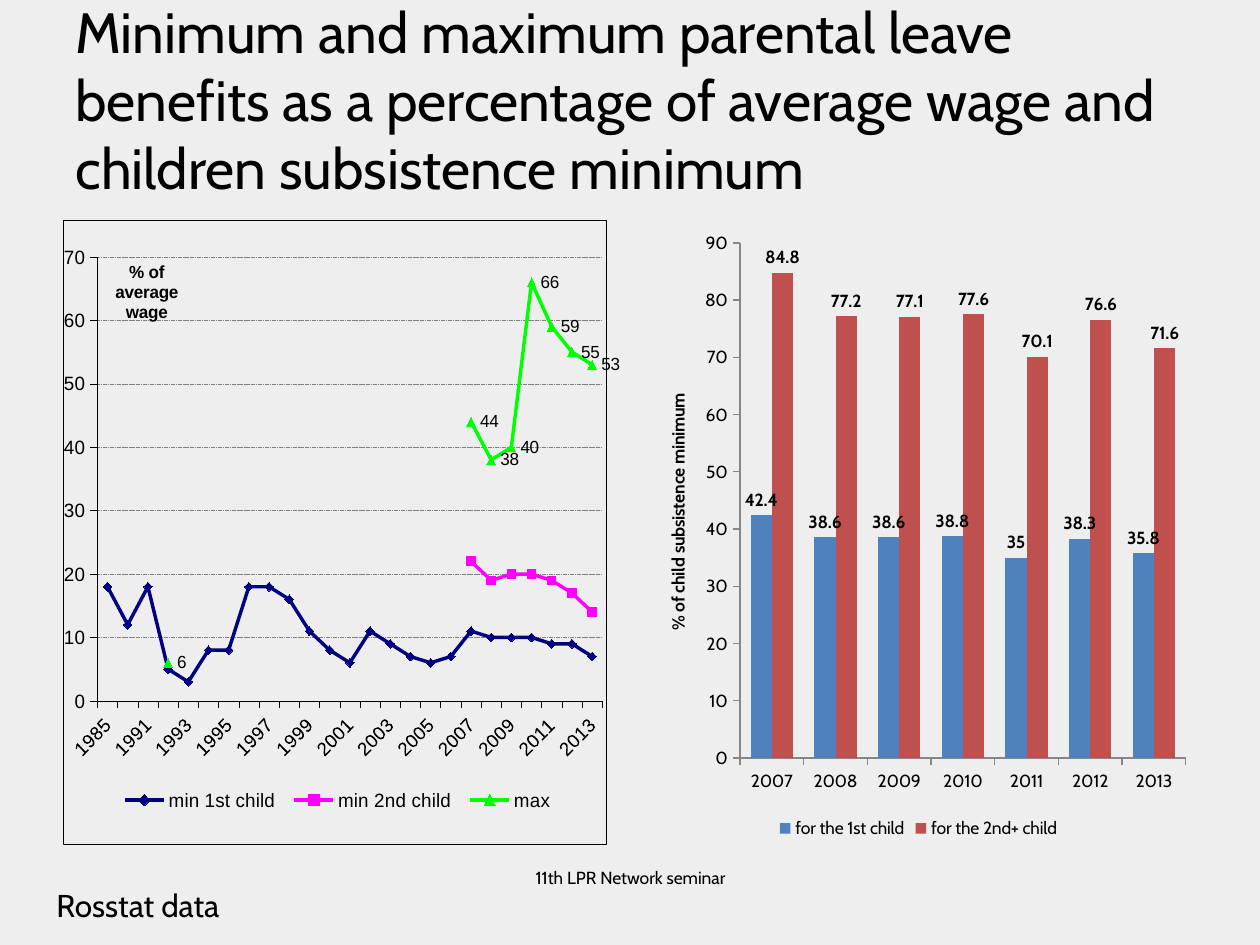
from dataclasses import dataclass
from typing import Any, Optional

from lxml import etree
from pptx import Presentation
from pptx import util as u
from pptx.chart import data as chart_data
from pptx.dml.color import RGBColor
from pptx.enum import chart as ch
from pptx.enum import dml, text
from pptx.oxml import ns, parse_xml

PX = 914400 // 126
BACKGROUND = RGBColor(0xEE, 0xEE, 0xEE)
BLACK = RGBColor(0, 0, 0)
GRID_GREY = RGBColor(0x80, 0x80, 0x80)
AXIS_GREY = RGBColor(0x86, 0x86, 0x86)
NAVY = RGBColor(0, 0, 0x80)
MAGENTA = RGBColor(0xFF, 0, 0xFF)
GREEN = RGBColor(0, 0xFF, 0)
BLUE = RGBColor(0x4F, 0x81, 0xBD)
RED = RGBColor(0xC0, 0x50, 0x4D)


@dataclass
class Area:
    left: int
    top: int
    width: int
    height: int

    def emu(self) -> list[int]:
        return [n * PX for n in (self.left, self.top, self.width, self.height)]


@dataclass
class Caption:
    words: str
    area: Area
    size: float
    align: Any = text.PP_ALIGN.LEFT
    anchor: Any = text.MSO_ANCHOR.TOP


@dataclass
class Measure:
    name: str
    values: list[Optional[float]]
    color: RGBColor
    marker: Any = None


CAPTIONS = [
    Caption("Minimum and maximum parental leave benefits as a percentage of "
            "average wage and children subsistence minimum",
            Area(63, 49, 1134, 158), 32.4, anchor=text.MSO_ANCHOR.BOTTOM),
    Caption("Rosstat data", Area(44, 880, 476, 50), 18),
    Caption("11th LPR Network seminar", Area(431, 861, 399, 65), 10,
            align=text.PP_ALIGN.CENTER),
]

WAGE_YEARS = ["1985"] + [str(year) for year in range(1990, 2014)]
WAGE_MEASURES = [
    Measure("min 1st child",
            [18, 12, 18, 5, 3, 8, 8, 18, 18, 16, 11, 8, 6, 11, 9, 7, 6, 7,
             11, 10, 10, 10, 9, 9, 7], NAVY, ch.XL_MARKER_STYLE.DIAMOND),
    Measure("min 2nd child", [None] * 18 + [22, 19, 20, 20, 19, 17, 14],
            MAGENTA, ch.XL_MARKER_STYLE.SQUARE),
    Measure("max", [None] * 3 + [6] + [None] * 14 + [44, 38, 40, 66, 59, 55, 53],
            GREEN, ch.XL_MARKER_STYLE.TRIANGLE),
]
SUBSISTENCE_YEARS = [str(year) for year in range(2007, 2014)]
SUBSISTENCE_MEASURES = [
    Measure("for the 1st child", [42.4, 38.6, 38.6, 38.8, 35, 38.3, 35.8], BLUE),
    Measure("for the 2nd+ child", [84.8, 77.2, 77.1, 77.6, 70.1, 76.6, 71.6], RED),
]


def apply(target: Any, **values: Any) -> None:
    for name, value in values.items():
        setattr(target, name, value)


def style_font(font: Any, name: str, size: float, bold: bool = False) -> None:
    apply(font, name=name, size=u.Pt(size), bold=bold)
    font.color.rgb = BLACK


def style_line(line: Any, color: RGBColor, width: float) -> None:
    line.color.rgb = color
    line.width = u.Pt(width)


def add_caption(page: Any, caption: Caption) -> None:
    box = page.shapes.add_textbox(*caption.area.emu())
    apply(box.text_frame, word_wrap=True, vertical_anchor=caption.anchor)
    para = box.text_frame.paragraphs[0]
    para.alignment = caption.align
    span = para.add_run()
    span.text = caption.words
    style_font(span.font, "Cabin", caption.size)


def add_measures(page: Any, kind: Any, area: Area, years: list[str],
                 measures: list[Measure], font: str, number_format: str) -> Any:
    data = chart_data.CategoryChartData(number_format=number_format)
    data.categories = years
    for measure in measures:
        data.add_series(measure.name, measure.values)
    chart = page.shapes.add_chart(kind, *area.emu(), data).chart
    apply(chart, has_title=False, has_legend=True)
    style_font(chart.font, font, 10)
    chart.legend.include_in_layout = False
    return chart


def style_axes(chart: Any, font: str, size: float, color: RGBColor, width: float) -> None:
    for axis in (chart.category_axis, chart.value_axis):
        apply(axis, major_tick_mark=ch.XL_TICK_MARK.OUTSIDE,
              minor_tick_mark=ch.XL_TICK_MARK.NONE, has_major_gridlines=False)
        style_font(axis.tick_labels.font, font, size)
        style_line(axis.format.line, color, width)


def add_axis_title(axis: Any, words: str, font: str, rotation: int) -> None:
    frame = axis.axis_title.text_frame
    frame.text = words
    style_font(frame.paragraphs[0].runs[0].font, font, 10, bold=True)
    axis.axis_title._element.find(".//" + ns.qn("a:bodyPr")).set("rot", str(rotation * 60000))


def show_values(series: Any, font: str, bold: bool, place: Any, number_format: str) -> None:
    labels = series.data_labels
    apply(labels, show_value=True, position=place, number_format=number_format,
          number_format_is_linked=False)
    style_font(labels.font, font, 10, bold)


def place_manually(element: Any, before: tuple[str, ...], **fractions: Any) -> None:
    """Set a manual layout, inserted ahead of the first child named in before."""
    for old in element.findall(ns.qn("c:layout")):
        element.remove(old)
    layout = parse_xml(f"<c:layout {ns.nsdecls('c')}><c:manualLayout/></c:layout>")
    for name, value in fractions.items():
        etree.SubElement(layout[0], ns.qn("c:" + name)).set("val", str(value))
    followers = [child for child in element if child.tag in map(ns.qn, before)]
    followers[0].addprevious(layout)


def add_wage_chart(page: Any) -> None:
    chart = add_measures(page, ch.XL_CHART_TYPE.LINE_MARKERS, Area(63, 220, 557, 624),
                         WAGE_YEARS, WAGE_MEASURES, "Arial", "0")
    style_axes(chart, "Arial", 11, BLACK, 0.25)
    for series, measure in zip(chart.plots[0].series, WAGE_MEASURES):
        series.smooth = False
        style_line(series.format.line, measure.color, 2)
        apply(series.marker, style=measure.marker, size=5)
        series.marker.format.fill.solid()
        series.marker.format.fill.fore_color.rgb = measure.color
        series.marker.format.line.color.rgb = measure.color
    show_values(series, "Arial", False, ch.XL_LABEL_POSITION.RIGHT, "#,##0")

    axis = chart.value_axis
    apply(axis, has_major_gridlines=True, minimum_scale=0, maximum_scale=70, major_unit=10)
    style_line(axis.major_gridlines.format.line, GRID_GREY, 0.25)
    axis.major_gridlines.format.line.dash_style = dml.MSO_LINE.SQUARE_DOT
    apply(axis.tick_labels, number_format="0", number_format_is_linked=False)
    add_axis_title(axis, "% of average wage", "Arial", 0)
    place_manually(axis.axis_title._element, ("c:overlay", "c:spPr", "c:txPr"),
                   xMode="edge", yMode="edge", x=0.09, y=0.06)

    years = chart.category_axis._element
    years.find(ns.qn("c:txPr")).find(ns.qn("a:bodyPr")).set("rot", str(-45 * 60000))
    skip = parse_xml(f"<c:tickLblSkip {ns.nsdecls('c')} val='2'/>")
    years.find(ns.qn("c:noMultiLvlLbl")).addprevious(skip)

    style_font(chart.legend.font, "Arial", 11)
    chart.legend.position = ch.XL_LEGEND_POSITION.RIGHT
    place_manually(chart.legend._element, ("c:overlay",), xMode="edge", yMode="edge",
                   x=0.09, y=0.9, w=0.83, h=0.06)
    place_manually(chart._chartSpace.chart.plotArea, ("c:lineChart",), layoutTarget="inner",
                   xMode="edge", yMode="edge", x=0.063, y=0.059, w=0.929, h=0.712)
    border = parse_xml(f"<c:spPr {ns.nsdecls('c', 'a')}><a:noFill/><a:ln w='3175'>"
                       f"<a:solidFill><a:srgbClr val='{BLACK}'/></a:solidFill></a:ln></c:spPr>")
    chart._chartSpace.chart.addnext(border)


def add_subsistence_chart(page: Any) -> None:
    chart = add_measures(page, ch.XL_CHART_TYPE.COLUMN_CLUSTERED, Area(640, 220, 557, 624),
                         SUBSISTENCE_YEARS, SUBSISTENCE_MEASURES, "Cabin", "General")
    style_axes(chart, "Cabin", 10, AXIS_GREY, 0.75)
    apply(chart.plots[0], gap_width=100, vary_by_categories=False)
    for series, measure in zip(chart.plots[0].series, SUBSISTENCE_MEASURES):
        series.format.fill.solid()
        series.format.fill.fore_color.rgb = measure.color
        show_values(series, "Cabin", True, ch.XL_LABEL_POSITION.OUTSIDE_END, "General")
    add_axis_title(chart.value_axis, "% of child subsistence minimum", "Cabin", -90)
    chart.legend.position = ch.XL_LEGEND_POSITION.BOTTOM


def main() -> None:
    deck = Presentation()
    apply(deck, slide_width=1260 * PX, slide_height=945 * PX)
    page = deck.slides.add_slide(deck.slide_layouts[6])
    page.background.fill.solid()
    page.background.fill.fore_color.rgb = BACKGROUND
    add_wage_chart(page)
    add_subsistence_chart(page)
    for caption in CAPTIONS:
        add_caption(page, caption)
    deck.save("out.pptx")


if __name__ == "__main__":
    main()
